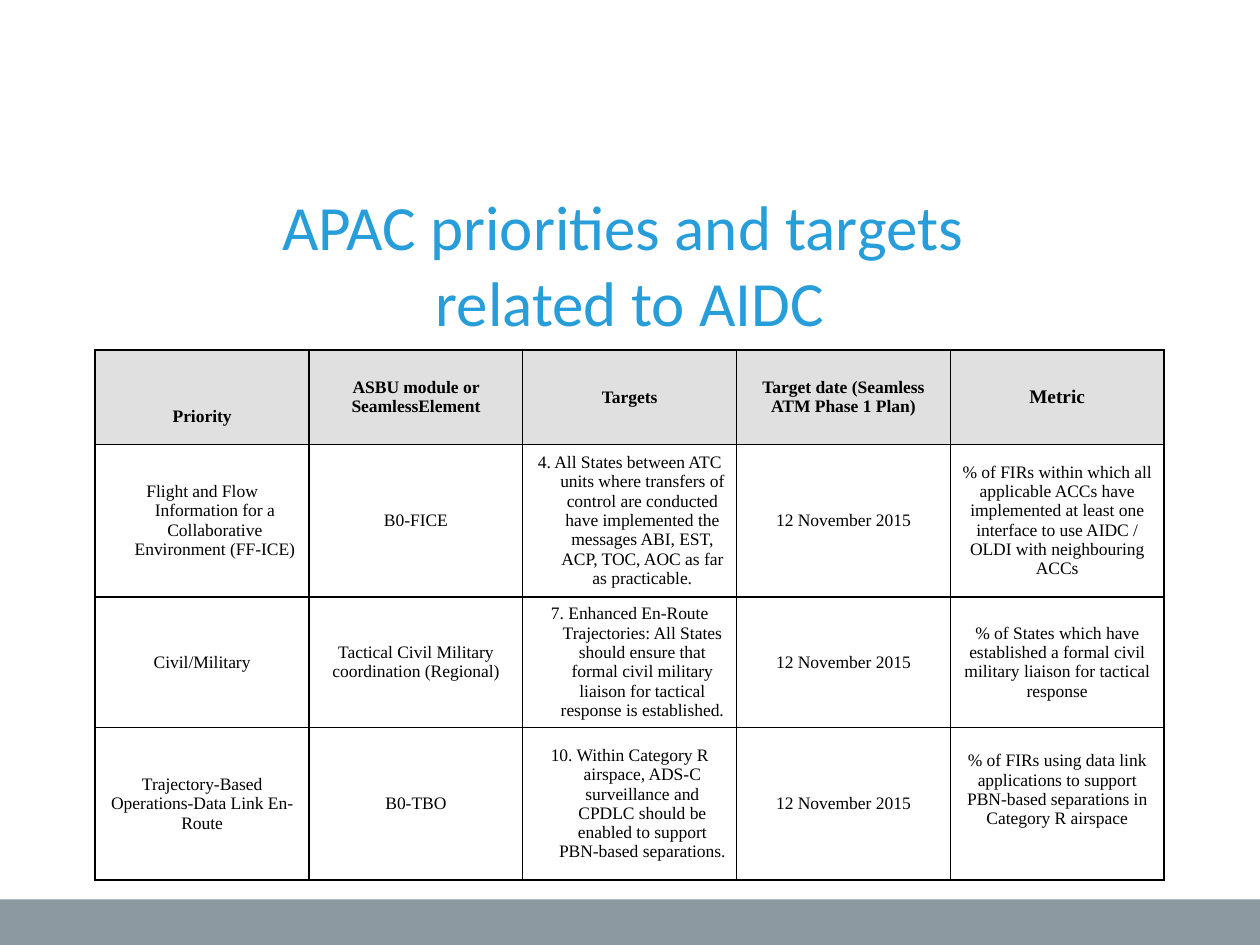
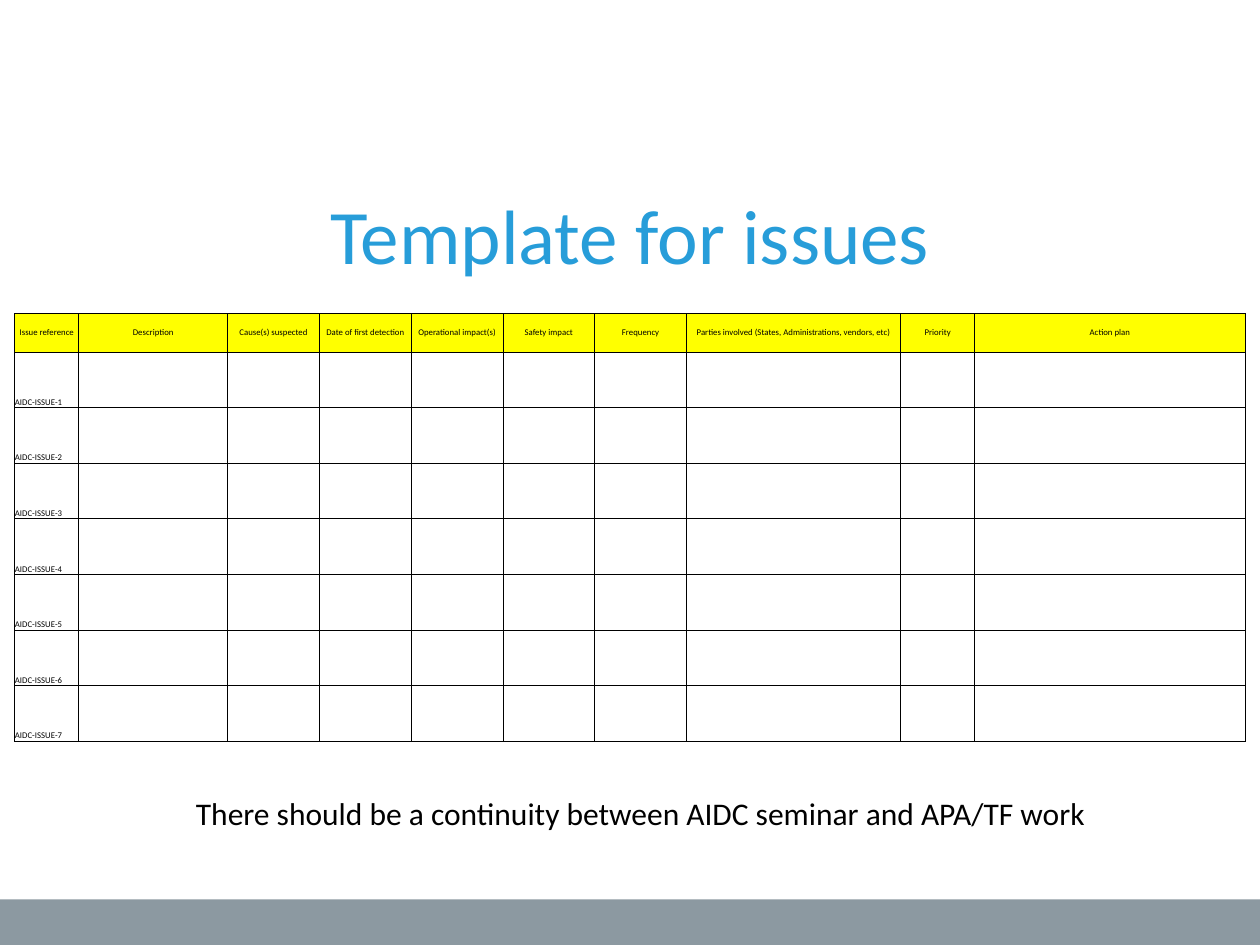
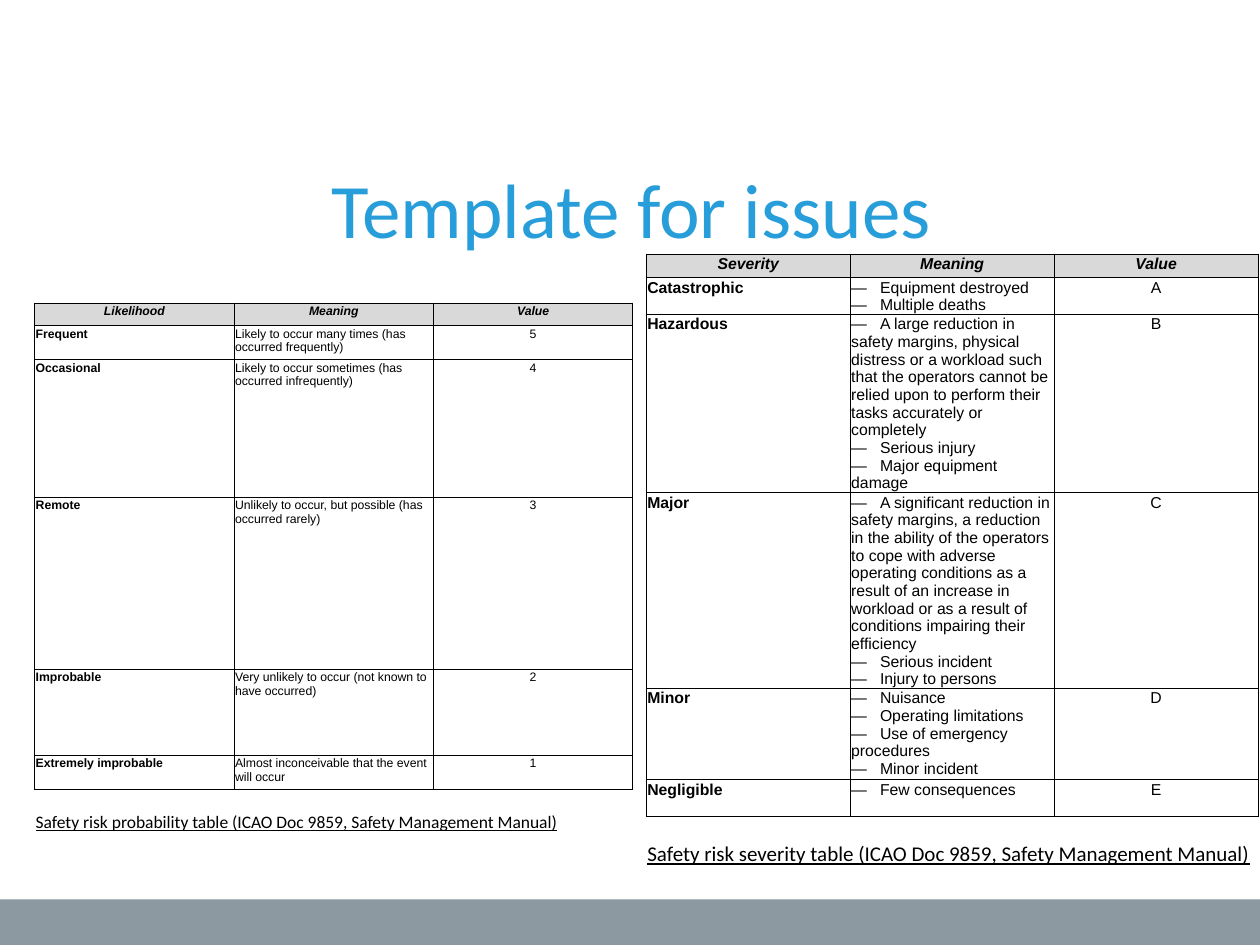
from dataclasses import dataclass, replace
from typing import Optional

from lxml import etree
from pptx import Presentation
from pptx import util as u
from pptx.dml.color import RGBColor
from pptx.enum import shapes, text
from pptx.oxml.ns import qn

# Shared look
BLACK, WHITE = "000000", "FFFFFF"
TITLE_BLUE, BAND_GREY = "279DD9", "8C99A1"
HEADER_GREY, RISK_GREY, ISSUE_YELLOW = "E0E0E0", "D9D9D9", "FFFF00"
NO_GRID_STYLE = "{2D5ABB26-0587-4C30-8999-92F81FD0307C}"
LEFT, CENTER = text.PP_ALIGN.LEFT, text.PP_ALIGN.CENTER
TOP, MIDDLE, BOTTOM = (text.MSO_ANCHOR.TOP, text.MSO_ANCHOR.MIDDLE,
                       text.MSO_ANCHOR.BOTTOM)


@dataclass(frozen=True)
class CellStyle:
    """Look of a table cell; margins are left, top, right, bottom in cm."""
    font: str
    size: float
    margins: tuple[float, float, float, float]
    border: float = 0.5
    sides: str = "LRTB"
    fill: Optional[str] = None
    bold: bool = False
    italic: bool = False
    underline: bool = False
    align: text.PP_ALIGN = CENTER
    anchor: text.MSO_ANCHOR = MIDDLE
    hanging: bool = False
    tab: Optional[float] = None


@dataclass(frozen=True)
class Grid:
    """Place of a table with its column widths and row heights, in cm."""
    left: float
    top: float
    columns: list[float]
    rows: list[float]


@dataclass(frozen=True)
class RiskTable:
    grid: Grid
    size: float
    caption_size: float
    header: list[str]
    levels: list[tuple[str, str, str]]
    caption: str


Cells = list[list[tuple[str, CellStyle]]]


def rgb(value: str) -> RGBColor:
    return RGBColor.from_string(value)


def set_font(paragraph, name: str, size: float, color: str = BLACK) -> None:
    paragraph.font.name = name
    paragraph.font.size = u.Pt(size)
    paragraph.font.color.rgb = rgb(color)


def add_band(slide) -> None:
    """Draw the bottom band behind everything else."""
    band = slide.shapes.add_shape(shapes.MSO_SHAPE.RECTANGLE, 0, u.Cm(18.13),
                                  u.Cm(25.4), u.Cm(0.92))
    band.shadow.inherit = False
    band.fill.solid()
    band.fill.fore_color.rgb = rgb(BAND_GREY)
    band.line.fill.background()
    slide.shapes.element.insert(2, band.element)


def add_titled_slide(presentation, title: str, size: float,
                     left: float = 1.27, top: float = 3.66):
    slide = presentation.slides.add_slide(presentation.slide_layouts[5])
    add_band(slide)
    shape = slide.shapes.title
    shape.left, shape.top = u.Cm(left), u.Cm(top)
    shape.width, shape.height = u.Cm(22.86), u.Cm(3.18)
    frame = shape.text_frame
    frame.text = title
    frame.auto_size = text.MSO_AUTO_SIZE.NONE
    frame.vertical_anchor = TOP
    paragraph = frame.paragraphs[0]
    paragraph.alignment = CENTER
    set_font(paragraph, "Calibri", size, TITLE_BLUE)
    return slide


def add_borders(cell, style: CellStyle) -> None:
    properties = cell._tc.get_or_add_tcPr()
    for index, side in enumerate("LRTB"):
        line = etree.Element(qn(f"a:ln{side}"), w=str(u.Pt(style.border)))
        if side in style.sides:
            fill = etree.SubElement(line, qn("a:solidFill"))
            etree.SubElement(fill, qn("a:srgbClr"), val=BLACK)
        else:
            etree.SubElement(line, qn("a:noFill"))
        properties.insert(index, line)


def fill_cell(cell, content: str, style: CellStyle) -> None:
    cell.text = content
    cell.vertical_anchor = style.anchor
    (cell.margin_left, cell.margin_top,
     cell.margin_right, cell.margin_bottom) = map(u.Cm, style.margins)
    if style.fill:
        cell.fill.solid()
        cell.fill.fore_color.rgb = rgb(style.fill)
    else:
        cell.fill.background()
    add_borders(cell, style)
    for paragraph in cell.text_frame.paragraphs:
        paragraph.alignment = style.align
        properties = paragraph._p.get_or_add_pPr()
        if style.hanging:
            properties.set("marL", str(u.Cm(0.51)))
            properties.set("indent", str(u.Cm(-0.61)))
        if style.tab:
            tabs = etree.SubElement(properties, qn("a:tabLst"))
            etree.SubElement(tabs, qn("a:tab"), pos=str(u.Cm(style.tab)), algn="l")
        set_font(paragraph, style.font, style.size)
        paragraph.font.bold = style.bold
        paragraph.font.italic = style.italic
        paragraph.font.underline = style.underline


def add_grid(slide, grid: Grid, cells: Cells):
    table = slide.shapes.add_table(
        len(grid.rows), len(grid.columns), u.Cm(grid.left), u.Cm(grid.top),
        u.Cm(sum(grid.columns)), u.Cm(sum(grid.rows))).table
    table.first_row = table.horz_banding = False
    table._tbl.tblPr.find(qn("a:tableStyleId")).text = NO_GRID_STYLE
    for column, width in zip(table.columns, grid.columns):
        column.width = u.Cm(width)
    for row, height, contents in zip(table.rows, grid.rows, cells):
        row.height = u.Cm(height)
        for cell, (content, style) in zip(row.cells, contents):
            fill_cell(cell, content, style)
    return table


# Slide 1: priorities
PRIORITY_HEADER = ["Priority", "ASBU module or SeamlessElement", "Targets",
                   "Target date (Seamless ATM Phase 1 Plan)", "Metric"]
TARGET_DATE = "12 November 2015"
PRIORITIES = [
    ["Flight and Flow Information for a Collaborative Environment (FF-ICE)",
     "B0-FICE",
     "4. All States between ATC units where transfers of control are conducted "
     "have implemented the messages ABI, EST, ACP, TOC, AOC as far as practicable.",
     TARGET_DATE,
     "% of FIRs within which all applicable ACCs have implemented at least one "
     "interface to use AIDC / OLDI with neighbouring ACCs"],
    ["Civil/Military",
     "Tactical Civil Military coordination (Regional)",
     "7. Enhanced En-Route Trajectories: All States should ensure that formal "
     "civil military liaison for tactical response is established.",
     TARGET_DATE,
     "% of States which have established a formal civil military liaison for "
     "tactical response"],
    ["Trajectory-Based Operations-Data Link En-Route",
     "B0-TBO",
     "10. Within Category R airspace, ADS-C surveillance and CPDLC should be "
     "enabled to support PBN-based separations.",
     TARGET_DATE,
     "% of FIRs using data link applications to support PBN-based separations "
     "in Category R airspace"],
]


def build_priorities(presentation) -> None:
    slide = add_titled_slide(
        presentation, "APAC priorities and targets \vrelated to AIDC", 36)
    body = CellStyle("Times New Roman", 10, (0.17, 0, 0.17, 0), border=1)
    hanging = replace(body, hanging=True)
    header = replace(body, bold=True, fill=HEADER_GREY)
    header_styles = [replace(header, margins=(0.17, 0.77, 0.17, 0)),
                     header, header, header, replace(header, size=11)]
    raised = replace(body, margins=(0.17, 0, 0.17, 0.56))
    row_styles = [[hanging, body, hanging, body, body],
                  [hanging, body, hanging, body, body],
                  [body, body, hanging, body, raised]]
    cells = [list(zip(PRIORITY_HEADER, header_styles))]
    cells += [list(zip(row, styles)) for row, styles in zip(PRIORITIES, row_styles)]
    add_grid(slide, Grid(1.92, 7.06, [4.31] * 5, [1.9, 3.07, 2.64, 3.07]), cells)


# Slide 2: issue log
ISSUE_HEADER = ["Issue reference", "Description", "Cause(s) suspected",
                "Date of first detection", "Operational impact(s)",
                "Safety impact", "Frequency",
                "Parties involved (States, Administrations, vendors, etc)",
                "Priority", "Action plan"]
ISSUE_COUNT = 7


def build_issue_log(presentation) -> None:
    slide = add_titled_slide(presentation, "Template for issues", 44)
    body = CellStyle("Calibri", 5, (0, 0, 0, 0), align=LEFT, anchor=BOTTOM)
    header = replace(body, fill=ISSUE_YELLOW, align=CENTER, anchor=MIDDLE)
    blanks = [("", body)] * (len(ISSUE_HEADER) - 1)
    cells = [[(label, header) for label in ISSUE_HEADER]]
    cells += [[(f"AIDC-ISSUE-{number}", body)] + blanks
              for number in range(1, ISSUE_COUNT + 1)]
    columns = [1.29, 3.0] + [1.85] * 5 + [4.32, 1.49, 5.45]
    add_grid(slide, Grid(0.3, 6.32, columns, [0.78] + [1.12] * ISSUE_COUNT), cells)

    note = slide.shapes.add_textbox(u.Cm(3.7), u.Cm(15.88), u.Cm(18.67), u.Cm(1.02))
    note.text_frame.word_wrap = False
    note.text_frame.auto_size = text.MSO_AUTO_SIZE.SHAPE_TO_FIT_TEXT
    note.text_frame.text = ("There should be a continuity between AIDC seminar "
                            "and APA/TF work")
    set_font(note.text_frame.paragraphs[0], "Calibri", 18)


# Slide 3: risk tables
def dashed(*items: str) -> str:
    return "\n".join(f"—\t{item}" for item in items)


PROBABILITY = RiskTable(
    Grid(0.7, 6.11, [4.02] * 3, [0.45, 0.69, 2.77, 3.47, 1.73, 0.69, 0.43, 0.46]),
    7, 10, ["Likelihood", "Meaning", "Value"],
    [("Frequent", "Likely to occur many times (has occurred frequently)", "5"),
     ("Occasional", "Likely to occur sometimes (has occurred infrequently)", "4"),
     ("Remote", "Unlikely to occur, but possible (has occurred rarely)", "3"),
     ("Improbable", "Very unlikely to occur (not known to have occurred)", "2"),
     ("Extremely improbable", "Almost inconceivable that the event will occur", "1")],
    "Safety risk probability table (ICAO Doc 9859, Safety Management Manual)")
SEVERITY = RiskTable(
    Grid(13.03, 5.12, [4.11] * 3, [0.47, 0.74, 2.97, 3.71, 1.85, 0.74, 0.47, 0.51]),
    9, 12, ["Severity", "Meaning", "Value"],
    [("Catastrophic", dashed("Equipment destroyed", "Multiple deaths"), "A"),
     ("Hazardous", dashed(
         "A large reduction in safety margins, physical distress or a workload "
         "such that the operators cannot be relied upon to perform their tasks "
         "accurately or completely",
         "Serious injury", "Major equipment damage"), "B"),
     ("Major", dashed(
         "A significant reduction in safety margins, a reduction in the ability "
         "of the operators to cope with adverse operating conditions as a result "
         "of an increase in workload or as a result of conditions impairing "
         "their efficiency",
         "Serious incident", "Injury to persons"), "C"),
     ("Minor", dashed("Nuisance", "Operating limitations",
                      "Use of emergency procedures", "Minor incident"), "D"),
     ("Negligible", dashed("Few consequences"), "E")],
    "Safety risk severity table (ICAO Doc 9859, Safety Management Manual)")


def add_risk_table(slide, risk: RiskTable) -> None:
    meaning = CellStyle("Arial", risk.size, (0.02, 0.03, 0.02, 0), fill=WHITE,
                        align=LEFT, anchor=TOP, tab=0.58)
    level = replace(meaning, bold=True, tab=None)
    value = replace(meaning, align=CENTER, tab=None)
    header = replace(value, bold=True, italic=True, fill=RISK_GREY)
    spacer = replace(value, fill=None, sides="T")
    caption = replace(meaning, font="Calibri", size=risk.caption_size, fill=None,
                      sides="", underline=True, anchor=BOTTOM, tab=None)
    cells = [[(label, header) for label in risk.header]]
    cells += [list(zip(row, (level, meaning, value))) for row in risk.levels]
    cells += [[("", spacer)] * 3, [(risk.caption, caption)] + [("", caption)] * 2]
    table = add_grid(slide, risk.grid, cells)
    last = len(risk.grid.rows) - 1
    table.cell(last, 0).merge(table.cell(last, 2))


def build_risk_tables(presentation) -> None:
    slide = add_titled_slide(presentation, "Template for issues", 44, 1.3, 3.12)
    for risk in (PROBABILITY, SEVERITY):
        add_risk_table(slide, risk)


def main() -> None:
    presentation = Presentation()
    presentation.slide_width, presentation.slide_height = u.Cm(25.4), u.Cm(19.05)
    build_priorities(presentation)
    build_issue_log(presentation)
    build_risk_tables(presentation)
    presentation.save("out.pptx")


if __name__ == "__main__":
    main()
